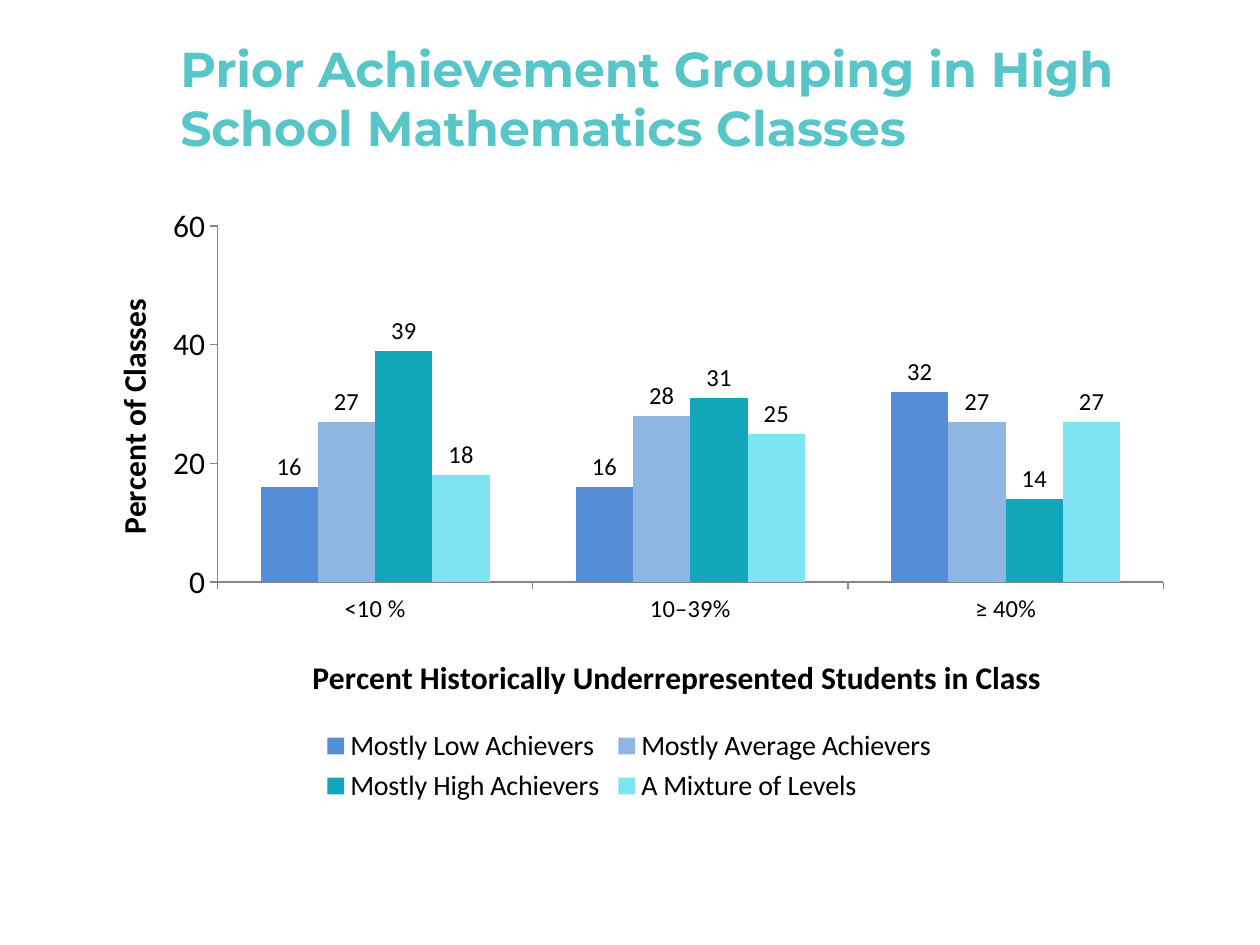
from dataclasses import dataclass

from lxml import etree
from pptx import Presentation
from pptx.chart.data import CategoryChartData
from pptx.dml.color import RGBColor
from pptx.enum.chart import XL_CHART_TYPE as ChartType, XL_LABEL_POSITION as LabelPos
from pptx.enum.chart import XL_LEGEND_POSITION as LegendPos, XL_TICK_MARK as TickMark
from pptx.enum.text import MSO_ANCHOR, MSO_AUTO_SIZE, PP_ALIGN
from pptx.oxml.ns import qn
from pptx.util import Cm, Pt


@dataclass(frozen=True)
class Theme:
    heading: str = "58C5C9"
    ink: str = "000000"
    axis: str = "868686"
    heading_font: str = "Montserrat"
    chart_font: str = "Calibri"
    heading_size: int = 28
    axis_size: int = 18
    legend_size: int = 16
    label_size: int = 14


theme = Theme()


def style(font, size, color=theme.ink, bold=False, face=theme.chart_font):
    font.size = Pt(size)
    font.bold = bold
    font.name = face
    font.color.rgb = RGBColor.from_string(color)


def place(parent, index, **fractions):
    for old in parent.findall(qn("c:layout")):
        parent.remove(old)
    layout = etree.Element(qn("c:layout"))
    manual = etree.SubElement(layout, qn("c:manualLayout"))
    if parent.tag == qn("c:plotArea"):
        etree.SubElement(manual, qn("c:layoutTarget")).set("val", "inner")
    for side in ("x", "y"):
        etree.SubElement(manual, qn(f"c:{side}Mode")).set("val", "edge")
    for side, fraction in fractions.items():
        etree.SubElement(manual, qn(f"c:{side}")).set("val", str(fraction))
    parent.insert(index, layout)


deck = Presentation()
deck.slide_width, deck.slide_height = Cm(25.4), Cm(19.05)
slide = deck.slides.add_slide(deck.slide_layouts[5])

heading = slide.shapes.title
heading.left, heading.top, heading.width, heading.height = Cm(3.38), Cm(0.76), Cm(20.75), Cm(2.41)
heading_frame = heading.text_frame
heading_frame.word_wrap = True
heading_frame.auto_size = MSO_AUTO_SIZE.NONE
heading_frame.vertical_anchor = MSO_ANCHOR.MIDDLE
heading_line = heading_frame.paragraphs[0]
heading_line.alignment = PP_ALIGN.LEFT
heading_run = heading_line.add_run()
heading_run.text = "Prior Achievement Grouping in High School Mathematics Classes"
style(heading_run.font, theme.heading_size, theme.heading, True, theme.heading_font)

achievement_groups = [
    ("Mostly Low Achievers", (16, 16, 32), "558ED5"),
    ("Mostly Average Achievers", (27, 28, 27), "8EB6E3"),
    ("Mostly High Achievers", (39, 31, 14), "13A6BA"),
    ("A Mixture of Levels", (18, 25, 27), "7FE4F2"),
]
class_percents = CategoryChartData()
class_percents.categories = ["<10 %", "10–39%", "≥ 40%"]
for name, percents, _ in achievement_groups:
    class_percents.add_series(name, percents)

chart = slide.shapes.add_chart(
    ChartType.COLUMN_CLUSTERED, Cm(1.47), Cm(3.94), Cm(22.43), Cm(12.37), class_percents
).chart
chart.has_title = False
style(chart.font, theme.axis_size)

columns = chart.plots[0]
columns.gap_width = 150
columns.overlap = 0
columns.vary_by_categories = False
for series, (_, _, color) in zip(columns.series, achievement_groups):
    series.format.fill.solid()
    series.format.fill.fore_color.rgb = RGBColor.from_string(color)
    series.invert_if_negative = False
    labels = series.data_labels
    labels.show_value = True
    labels.position = LabelPos.OUTSIDE_END
    style(labels.font, theme.label_size)

student_axis, class_axis = chart.category_axis, chart.value_axis
class_axis.minimum_scale, class_axis.maximum_scale, class_axis.major_unit = 0, 60, 20
for axis, caption, size, x, y in (
    (student_axis, "Percent Historically Underrepresented Students in Class", theme.label_size, 0.21, 0.74),
    (class_axis, "Percent of Classes", theme.axis_size, 0.03, 0.16),
):
    axis.has_major_gridlines = False
    axis.major_tick_mark = TickMark.OUTSIDE
    axis.minor_tick_mark = TickMark.NONE
    axis.format.line.color.rgb = RGBColor.from_string(theme.axis)
    axis.format.line.width = Pt(0.75)
    style(axis.tick_labels.font, size)
    caption_run = axis.axis_title.text_frame.paragraphs[0].add_run()
    caption_run.text = caption
    style(caption_run.font, theme.axis_size, bold=True)
    place(axis.axis_title._element, 1, x=x, y=y)

chart.has_legend = True
legend = chart.legend
legend.position = LegendPos.BOTTOM
legend.include_in_layout = False
style(legend.font, theme.legend_size)
place(legend._element, 1, x=0.22, y=0.86, w=0.56, h=0.14)
place(chart._chartSpace.chart.plotArea, 0, x=0.13, y=0.05, w=0.85, h=0.58)

deck.save("out.pptx")
